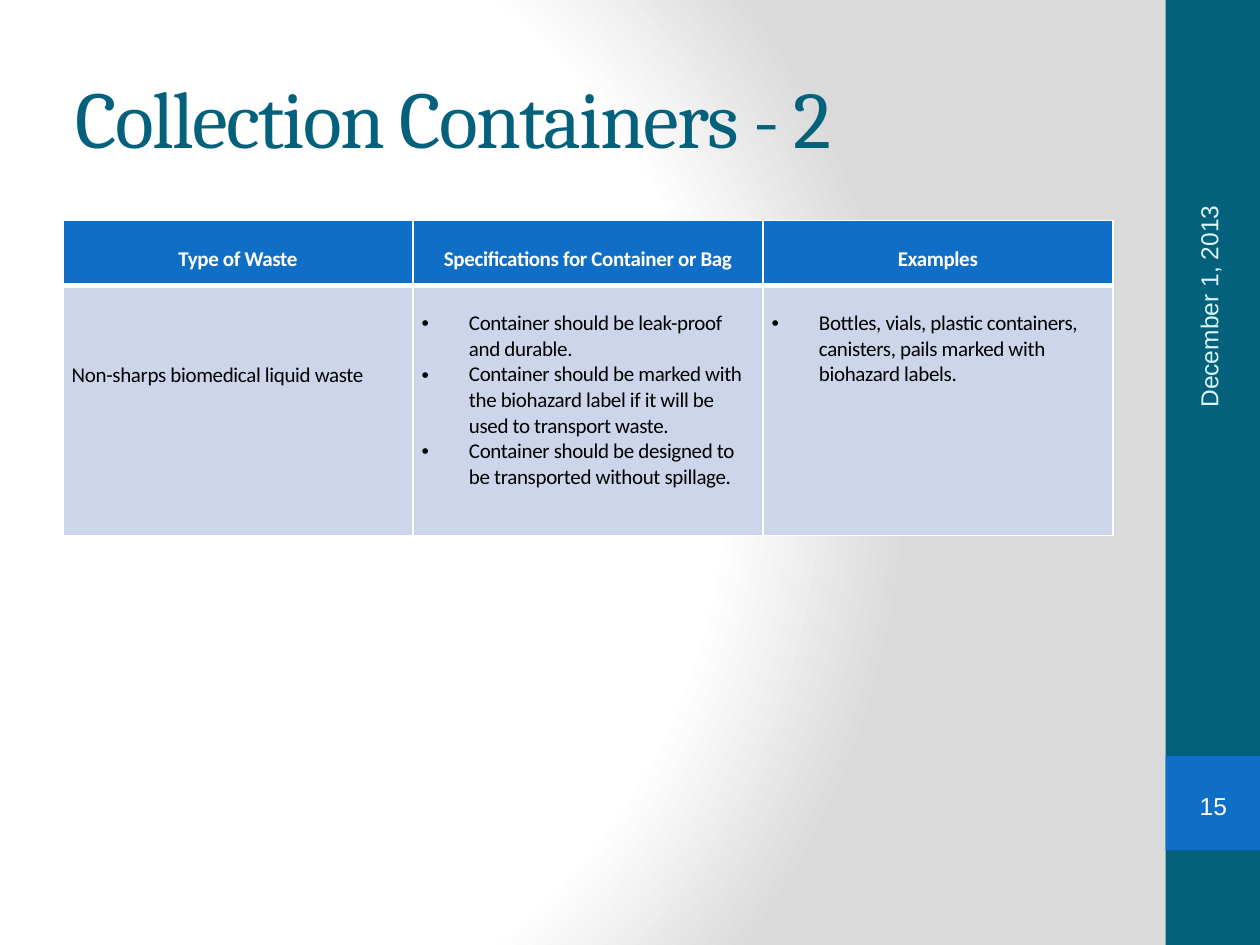
"""Build the slide on containers for collecting biomedical waste."""
from dataclasses import dataclass

from pptx import Presentation
from pptx.dml.color import RGBColor
from pptx.enum.shapes import MSO_SHAPE
from pptx.enum.text import MSO_ANCHOR, MSO_AUTO_SIZE, PP_ALIGN
from pptx.oxml import parse_xml
from pptx.oxml.ns import nsdecls
from pptx.util import Pt

TEAL, BLUE, PALE, WHITE, BLACK = "04617B", "0F6FC6", "CCD5EA", "FFFFFF", "000000"
INDENT = 27


@dataclass
class Style:
    """Hold the look of a run of text."""
    name: str
    size: float
    color: str
    bold: bool = False
    space: int = 0


@dataclass
class Entry:
    """Hold the text and layout of one table cell."""
    lines: list[str]
    style: Style
    fill: str
    top: float = 0
    spread: float = 1
    align: PP_ALIGN = PP_ALIGN.LEFT
    bullet: bool = False
    base: float = 1


TITLE = Style("Cambria", 46, TEAL, space=-100)
DATE = Style("Arial", 14, "DBF5F9")
NUMBER = Style("Arial", 14, WHITE)
HEAD = Style("Calibri", 12, WHITE, True, -20)
BODY = Style("Calibri", 12, BLACK, space=-20)

HEADS = ["Type of Waste", "Specifications for Container or Bag", "Examples"]
RULES = [
    "Container should be leak-proof and durable.",
    "Container should be marked with the biohazard label if it will be used to transport waste.",
    "Container should be designed to be transported without spillage.",
]
CASES = ["Bottles, vials, plastic containers, canisters, pails marked with biohazard labels."]
ROWS = [
    [Entry([head], HEAD, BLUE, spread=2, align=PP_ALIGN.CENTER, base=3) for head in HEADS],
    [
        Entry(["Non-sharps biomedical liquid waste"], BODY, PALE, top=29.3, spread=2),
        Entry(RULES, BODY, PALE, top=14.65, bullet=True),
        Entry(CASES, BODY, PALE, top=14.65, bullet=True),
    ],
]


def color(text: str) -> RGBColor:
    """Turn a hex string into a colour."""
    return RGBColor.from_string(text)


def apply(item, values: dict) -> None:
    """Set each named value on an item."""
    for key, value in values.items():
        setattr(item, key, value)


def write(para, text: str, style: Style) -> None:
    """Add one styled run to a paragraph."""
    run = para.add_run()
    run.text = text
    apply(run.font, {"name": style.name, "size": Pt(style.size), "bold": style.bold})
    run.font.color.rgb = color(style.color)
    if style.space:
        run.font._element.set("spc", str(style.space))


def dot(para) -> None:
    """Give a paragraph a hanging bullet."""
    props = para._p.get_or_add_pPr()
    apply_indent = {"marL": Pt(INDENT), "indent": -Pt(INDENT)}
    for key, value in apply_indent.items():
        props.set(key, str(value))
    for tag in ('buFont {} typeface="Arial"', 'buChar {} char="•"'):
        props.append(parse_xml(f"<a:{tag.format(nsdecls('a'))}/>"))


def edge(cell, base: float) -> None:
    """Draw the white borders of a cell."""
    props = cell._tc.get_or_add_tcPr()
    for spot, (side, width) in enumerate({"L": 1, "R": 1, "T": 1, "B": base}.items()):
        props.insert(spot, parse_xml(
            f'<a:ln{side} {nsdecls("a")} w="{Pt(width)}"><a:solidFill>'
            f'<a:srgbClr val="{WHITE}"/></a:solidFill></a:ln{side}>'))


def fill_cell(cell, entry: Entry) -> None:
    """Put an entry into a table cell."""
    apply(cell, {"margin_left": Pt(5), "margin_right": Pt(5), "margin_top": Pt(entry.top),
                 "margin_bottom": 0, "vertical_anchor": MSO_ANCHOR.TOP})
    cell.fill.solid()
    cell.fill.fore_color.rgb = color(entry.fill)
    edge(cell, entry.base)
    frame = cell.text_frame
    for spot, line in enumerate(entry.lines):
        para = frame.add_paragraph() if spot else frame.paragraphs[0]
        apply(para, {"alignment": entry.align, "line_spacing": entry.spread})
        if entry.bullet:
            dot(para)
        write(para, line, entry.style)


def add_grid(slide) -> None:
    """Add the table of waste and containers."""
    shape = slide.shapes.add_table(len(ROWS), len(HEADS), Pt(36), Pt(126), Pt(600), Pt(180))
    table = shape.table
    table.horz_banding = False
    for row, height, group in zip(table.rows, (37, 143), ROWS):
        row.height = Pt(height)
        for cell, entry in zip(row.cells, group):
            fill_cell(cell, entry)


def add_block(slide, top: float, height: float, fill: str) -> None:
    """Add a plain block to the side bar."""
    block = slide.shapes.add_shape(MSO_SHAPE.RECTANGLE, Pt(666), Pt(top), Pt(54), Pt(height))
    block.shadow.inherit = False
    block.fill.solid()
    block.fill.fore_color.rgb = color(fill)
    block.line.fill.background()


def add_date(slide) -> None:
    """Add the date, turned to read upward."""
    box = slide.shapes.add_textbox(Pt(594.7), Pt(129.6), Pt(192), Pt(28.8))
    box.rotation = 270
    apply(box.text_frame, {"word_wrap": True, "vertical_anchor": MSO_ANCHOR.MIDDLE})
    write(box.text_frame.paragraphs[0], "December 1, 2013", DATE)


def add_number(slide) -> None:
    """Add the slide number in its bracket shape."""
    mark = slide.shapes.add_shape(MSO_SHAPE.DOUBLE_BRACKET, Pt(671.8), Pt(445), Pt(43), Pt(31))
    mark.adjustments[0] = 0.18
    mark.shadow.inherit = False
    mark.fill.background()
    mark.line.fill.background()
    frame = mark.text_frame
    apply(frame, {"vertical_anchor": MSO_ANCHOR.MIDDLE, "margin_left": 0, "margin_right": 0,
                  "margin_top": 0, "margin_bottom": 0})
    frame.paragraphs[0].alignment = PP_ALIGN.CENTER
    write(frame.paragraphs[0], "15", NUMBER)


def add_title(slide) -> None:
    """Place and style the title."""
    title = slide.shapes.title
    apply(title, {"left": Pt(36), "top": Pt(21.6), "width": Pt(600), "height": Pt(90)})
    apply(title.text_frame, {"word_wrap": True, "auto_size": MSO_AUTO_SIZE.NONE,
                             "vertical_anchor": MSO_ANCHOR.MIDDLE})
    para = title.text_frame.paragraphs[0]
    para.alignment = PP_ALIGN.LEFT
    write(para, "Collection Containers - 2", TITLE)


def add_ground(slide) -> None:
    """Give the slide its round grey gradient."""
    stops = "".join(f'<a:gs pos="{spot * 1000}"><a:srgbClr val="{tone}"/></a:gs>'
                    for spot, tone in ((0, WHITE), (75, WHITE), (100, "DADADA")))
    slide.element.cSld.insert(0, parse_xml(
        f'<p:bg {nsdecls("p", "a")}><p:bgPr><a:gradFill rotWithShape="1"><a:gsLst>{stops}</a:gsLst>'
        '<a:path path="circle"><a:fillToRect l="20000" t="50000" r="100000" b="50000"/></a:path>'
        '</a:gradFill><a:effectLst/></p:bgPr></p:bg>'))


def main() -> None:
    """Build and save the slide."""
    deck = Presentation()
    apply(deck, {"slide_width": Pt(720), "slide_height": Pt(540)})
    slide = deck.slides.add_slide(deck.slide_layouts[5])
    add_ground(slide)
    add_block(slide, 0, 540, TEAL)
    add_block(slide, 432, 54, BLUE)
    add_title(slide)
    add_grid(slide)
    add_date(slide)
    add_number(slide)
    deck.save("out.pptx")


if __name__ == "__main__":
    main()
